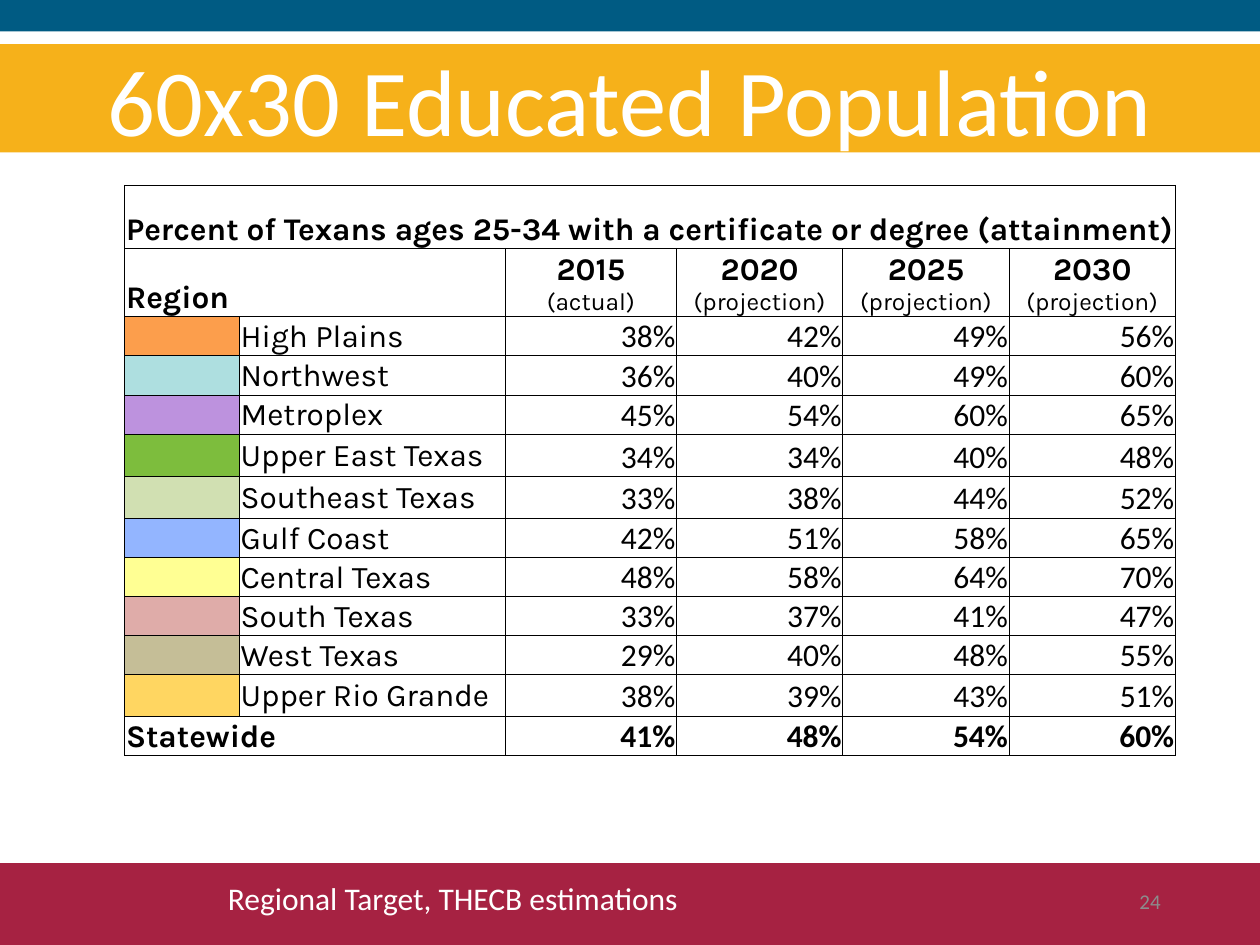
from lxml.etree import SubElement
from pptx import Presentation
from pptx.dml.color import RGBColor
from pptx.enum.shapes import MSO_SHAPE as Preset
from pptx.enum.text import MSO_ANCHOR as Anchor, MSO_AUTO_SIZE as AutoSize, PP_ALIGN as Align
from pptx.oxml.ns import qn
from pptx.util import Inches, Pt

WIDTH, HEIGHT = 10, 7.5
TITLE = "60x30 Educated Population"
CAPTION = "Percent of Texans ages 25-34 with a certificate or degree (attainment)"
YEARS = [("2015", "(actual)"), ("2020", "(projection)"),
         ("2025", "(projection)"), ("2030", "(projection)")]
REGIONS = [
    ("FC9E4C", "High Plains", (38, 42, 49, 56)),
    ("AEDFE0", "Northwest", (36, 40, 49, 60)),
    ("BD92DE", "Metroplex", (45, 54, 60, 65)),
    ("7DBD3D", "Upper East Texas", (34, 34, 40, 48)),
    ("D1E0B2", "Southeast Texas", (33, 38, 44, 52)),
    ("93B5FF", "Gulf Coast", (42, 51, 58, 65)),
    ("FFFF93", "Central Texas", (48, 58, 64, 70)),
    ("DFACA9", "South Texas", (33, 37, 41, 47)),
    ("C5BE97", "West Texas", (29, 40, 48, 55)),
    ("FFD661", "Upper Rio Grande", (38, 39, 43, 51)),
]
STATEWIDE = (41, 48, 54, 60)
BANDS = [("A62242", 6.85, 0.65), ("005B83", 0, 0.25)]
TITLE_BAND = ("F6B11A", 0.35, 0.86)
COLUMN_WIDTHS = [0.91, 2.11, 1.36, 1.32, 1.32, 1.32]
ROW_HEIGHT = 0.31
SPECIAL_ROWS = {0: 0.5, 1: 0.54, 5: 0.34, 6: 0.33, 11: 0.33}
BODY = {"name": "Karla", "size": 18, "color": "000000", "bold": False}
STRONG = BODY | {"bold": True}
SMALL = BODY | {"size": 14}
NUMBER = BODY | {"name": "Calibri"}
WHITE = NUMBER | {"color": "FFFFFF"}
GREY = NUMBER | {"size": 12, "color": "8C8C8C"}
CELL_FORMAT = {"margin_left": Inches(0.01), "margin_right": Inches(0.01),
               "margin_top": Inches(0.01), "margin_bottom": 0}


def paint(fill, color):
    fill.solid()
    fill.fore_color.rgb = RGBColor.from_string(color)


def write(frame, lines, align=Align.LEFT):
    for index, (text, style) in enumerate(lines):
        paragraph = frame.add_paragraph() if index else frame.paragraphs[0]
        paragraph.alignment = align
        run = paragraph.add_run()
        run.text = text
        values = style | {"size": Pt(style["size"])}
        run.font.color.rgb = RGBColor.from_string(values.pop("color"))
        for name, value in values.items():
            setattr(run.font, name, value)


def add_borders(cell):
    properties = cell._tc.get_or_add_tcPr()
    for index, side in enumerate("LRTB"):
        line = SubElement(properties, qn(f"a:ln{side}"), w=str(Pt(0.5)))
        SubElement(SubElement(line, qn("a:solidFill")), qn("a:srgbClr"), val="000000")
        properties.insert(index, line)


def add_label(slide, text, style, box, align=Align.LEFT, anchor=Anchor.TOP):
    frame = slide.shapes.add_textbox(*map(Inches, box)).text_frame
    frame.word_wrap = True
    frame.vertical_anchor = anchor
    write(frame, [(text, style)], align)


def add_attainment_table(slide):
    row_count = len(REGIONS) + 3
    heights = [SPECIAL_ROWS.get(row, ROW_HEIGHT) for row in range(row_count)]
    box = map(Inches, (0.99, 1.47, sum(COLUMN_WIDTHS), sum(heights)))
    table = slide.shapes.add_table(row_count, len(COLUMN_WIDTHS), *box).table
    table.first_row = table.horz_banding = False
    for column, width in zip(table.columns, COLUMN_WIDTHS):
        column.width = Inches(width)
    for row, height in zip(table.rows, heights):
        row.height = Inches(height)
    for cell in table.iter_cells():
        cell.fill.background()
        add_borders(cell)
        cell.vertical_anchor = Anchor.BOTTOM
        for name, value in CELL_FORMAT.items():
            setattr(cell, name, value)

    last = row_count - 1
    for row, end, text in [(0, 5, CAPTION), (1, 1, "Region"), (last, 1, "Statewide")]:
        table.cell(row, 0).merge(table.cell(row, end))
        write(table.cell(row, 0).text_frame, [(text, STRONG)])
    for column, (year, kind) in enumerate(YEARS, 2):
        write(table.cell(1, column).text_frame, [(year, STRONG), (kind, SMALL)], Align.CENTER)
    for row, (color, region, _) in enumerate(REGIONS, 2):
        paint(table.cell(row, 0).fill, color)
        table.cell(row, 1).vertical_anchor = Anchor.MIDDLE
        write(table.cell(row, 1).text_frame, [(region, BODY)])
    shares = [values for _, _, values in REGIONS] + [STATEWIDE]
    for row, values in enumerate(shares, 2):
        style = NUMBER | {"bold": row == last}
        for column, value in enumerate(values, 2):
            write(table.cell(row, column).text_frame, [(f"{value}%", style)], Align.RIGHT)


def main():
    """Build the regional attainment slide."""
    presentation = Presentation()
    presentation.slide_width, presentation.slide_height = Inches(WIDTH), Inches(HEIGHT)
    slide = presentation.slides.add_slide(presentation.slide_layouts[5])
    for color, top, height in BANDS:
        band = slide.shapes.add_shape(Preset.RECTANGLE, *map(Inches, (0, top, WIDTH, height)))
        band.shadow.inherit = False
        paint(band.fill, color)
        band.line.fill.background()

    title = slide.shapes.title
    color, top, height = TITLE_BAND
    for name, value in {"left": 0, "top": top, "width": WIDTH, "height": height}.items():
        setattr(title, name, Inches(value))
    paint(title.fill, color)
    title.text_frame.auto_size = AutoSize.NONE
    title.text_frame.vertical_anchor = Anchor.MIDDLE
    write(title.text_frame, [(TITLE, WHITE | {"size": 54})], Align.CENTER)

    add_label(slide, "Regional Target, THECB estimations", WHITE, (1.71, 6.93, 6.59, 0.4))
    add_attainment_table(slide)
    add_label(slide, "24", GREY, (7.06, 6.95, 2.25, 0.4), Align.RIGHT, Anchor.MIDDLE)
    presentation.save("out.pptx")


if __name__ == "__main__":
    main()
